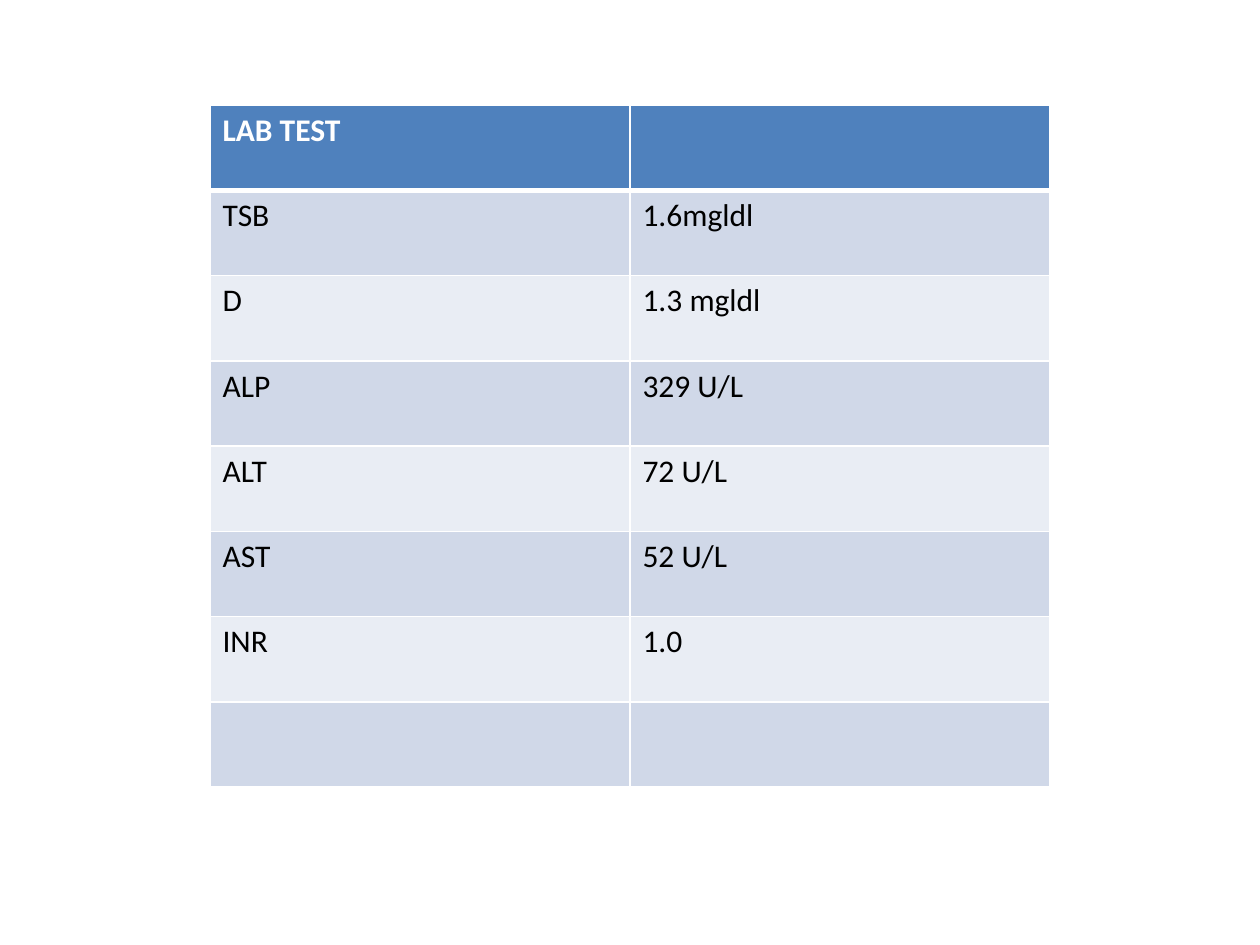
import pptx
import pptx.util
import pptx.dml.color
import pptx.oxml.ns
import lxml.etree

SLIDE_WIDTH, SLIDE_HEIGHT = 10, 7.5
HEADER_FILL = "4F81BD"
BAND_FILLS = ("D0D8E8", "E9EDF4")
WHITE, BLACK = "FFFFFF", "000000"
THIN, THICK = 1, 3

LAB_ROWS = [
    ("LAB TEST", ""),
    ("TSB", "1.6mgldl"),
    ("D", "1.3 mgldl"),
    ("ALP", "329 U/L"),
    ("ALT", "72 U/L"),
    ("AST", "52 U/L"),
    ("INR", "1.0"),
    ("", ""),
]


def color(value):
    return pptx.dml.color.RGBColor.from_string(value)


def set_borders(cell, widths):
    """Draw white cell borders; widths maps a side (L, R, T, B) to points."""
    properties = cell._tc.get_or_add_tcPr()
    qualify = pptx.oxml.ns.qn
    for side, width in widths.items():
        line = lxml.etree.SubElement(properties, qualify(f"a:ln{side}"),
                                     w=str(pptx.util.Pt(width)))
        fill = lxml.etree.SubElement(line, qualify("a:solidFill"))
        lxml.etree.SubElement(fill, qualify("a:srgbClr"), val=WHITE)


def format_cell(cell, text, row):
    is_header = row == 0
    set_borders(cell, {"L": THIN, "R": THIN,
                       "T": THICK if row == 1 else THIN,
                       "B": THICK if is_header else THIN})
    cell.fill.solid()
    cell.fill.fore_color.rgb = color(
        HEADER_FILL if is_header else BAND_FILLS[(row - 1) % 2])

    cell.text = text
    font = cell.text_frame.paragraphs[0].font
    formats = {"name": "Calibri", "size": pptx.util.Pt(18), "bold": is_header}
    for name, value in formats.items():
        setattr(font, name, value)
    font.color.rgb = color(WHITE if is_header else BLACK)


def add_lab_table(page, box, rows):
    """Fill the box with a table of equal columns and rows."""
    left, top, width, height = (pptx.util.Inches(length) for length in box)
    table = page.shapes.add_table(len(rows), len(rows[0]),
                                  left, top, width, height).table
    for column in table.columns:
        column.width = width // len(rows[0])
    for row, texts in enumerate(rows):
        table.rows[row].height = height // len(rows)
        for column, text in enumerate(texts):
            format_cell(table.cell(row, column), text, row)


def main():
    deck = pptx.Presentation()
    deck.slide_width = pptx.util.Inches(SLIDE_WIDTH)
    deck.slide_height = pptx.util.Inches(SLIDE_HEIGHT)
    page = deck.slides.add_slide(deck.slide_layouts[6])

    # Lab results: the middle two thirds of the width, from a ninth down
    box = (SLIDE_WIDTH / 6, SLIDE_HEIGHT / 9,
           SLIDE_WIDTH * 2 / 3, SLIDE_HEIGHT * 13 / 18)
    add_lab_table(page, box, LAB_ROWS)
    deck.save("out.pptx")


if __name__ == "__main__":
    main()
